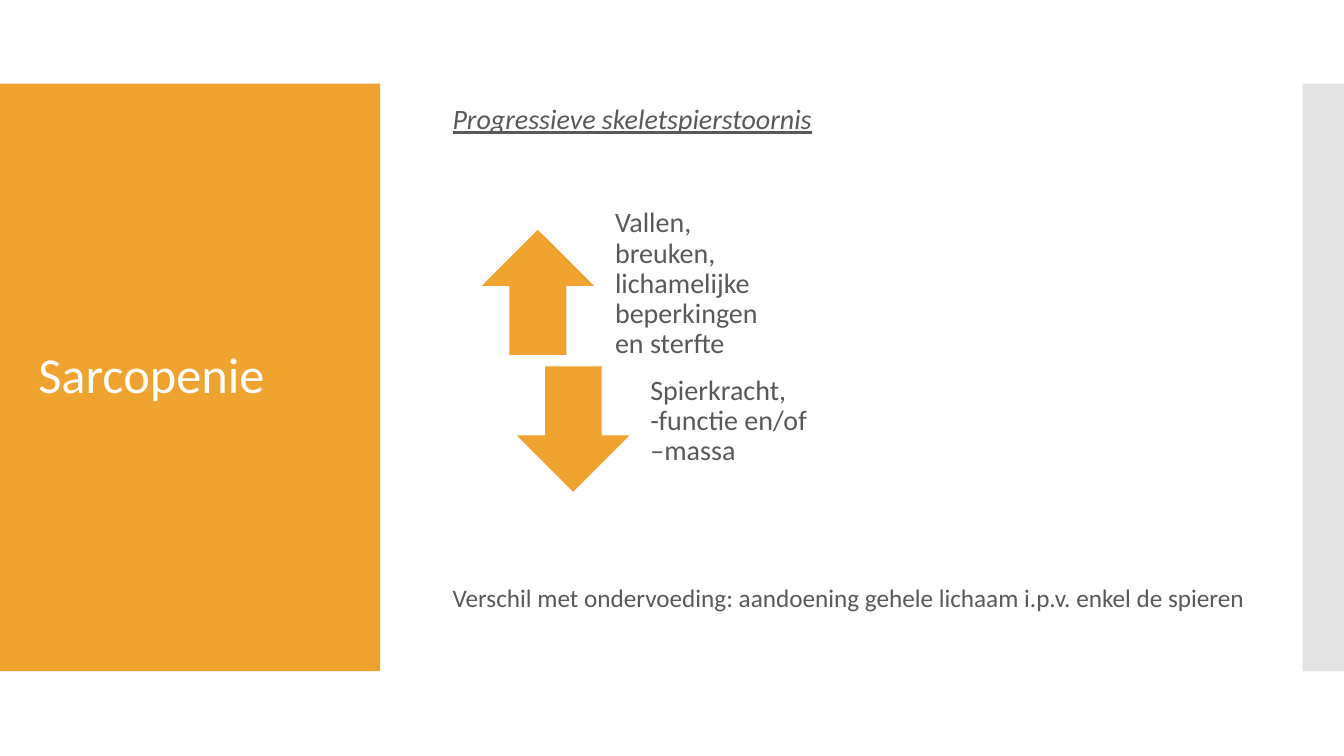
from lxml import etree
from pptx import Presentation
from pptx.dml.color import RGBColor
from pptx.enum.shapes import MSO_SHAPE
from pptx.enum.text import MSO_ANCHOR, PP_ALIGN
from pptx.oxml.ns import qn
from pptx.util import Inches, Pt

RECTANGLE = MSO_SHAPE.RECTANGLE
UP_ARROW, DOWN_ARROW = MSO_SHAPE.UP_ARROW, MSO_SHAPE.DOWN_ARROW
TOP, MIDDLE = MSO_ANCHOR.TOP, MSO_ANCHOR.MIDDLE
LEFT = PP_ALIGN.LEFT

FONT = "Calibri"
COLORS = {
    "panel": "F0A22E",
    "arrow": "EFA22D",
    "strip": "C8C8C8",
    "text": "595959",
    "white": "FFFFFF",
}
TITLE_ONLY = 5
BODY_INSETS = (0.1, 0.05, 0.1, 0.05)
LABEL_INSETS = (0.16, 0, 0.16, 0.16)
EFFECTS = (
    (UP_ARROW, "Vallen, breuken, lichamelijke beperkingen en sterfte"),
    (DOWN_ARROW, "Spierkracht, -functie en/of –massa"),
)


def color(name):
    return RGBColor.from_string(COLORS[name])


def add_filled_shape(slide, kind, box, fill):
    shape = slide.shapes.add_shape(kind, *map(Inches, box))
    shape.shadow.inherit = False
    shape.fill.solid()
    shape.fill.fore_color.rgb = color(fill)
    shape.line.fill.background()
    return shape


def write_text(shape, text, size, text_color="text", anchor=TOP,
               insets=BODY_INSETS, line_spacing=None):
    """Format the shape's text frame, write one paragraph and return its run."""
    frame = shape.text_frame
    frame.word_wrap = True
    frame.vertical_anchor = anchor
    (frame.margin_left, frame.margin_top,
     frame.margin_right, frame.margin_bottom) = map(Inches, insets)
    paragraph = frame.paragraphs[0]
    paragraph.alignment = LEFT
    paragraph.line_spacing = line_spacing
    run = paragraph.add_run()
    run.text = text
    run.font.name = FONT
    run.font.size = Pt(size)
    run.font.color.rgb = color(text_color)
    return run


def add_text(slide, box, text, size, **text_format):
    text_box = slide.shapes.add_textbox(*map(Inches, box))
    return write_text(text_box, text, size, **text_format)


def add_title_panel(slide, box, text):
    left, top, width, height = box
    add_filled_shape(slide, RECTANGLE, box, "panel")
    title = slide.shapes.title
    title.left, title.top = Inches(left + 0.28), Inches(top + 0.4)
    title.width, title.height = Inches(width - 0.55), Inches(height - 0.8)
    write_text(title, text, 36, text_color="white", anchor=MIDDLE, line_spacing=0.9)
    # The title has to lie in front of the panel
    title.element.getparent().append(title.element)


def add_side_strip(slide, box):
    strip = add_filled_shape(slide, RECTANGLE, box, "strip")
    fill_color = next(strip.element.iter(qn("a:srgbClr")))
    etree.SubElement(fill_color, qn("a:alpha"), val="50000")


def add_effects(slide, box):
    """Place the arrows in equal rows, each row a step further to the right."""
    left, top, width, height = box
    indent, gap, arrow_width, label_offset = 0.35, 0.1, 1.15, 1.18
    row_height = (height - gap) / len(EFFECTS)
    label_width = width - label_offset - indent * (len(EFFECTS) - 1)
    for index, (kind, text) in enumerate(EFFECTS):
        row_left = left + index * indent
        row_top = top + index * (row_height + gap)
        arrow = add_filled_shape(
            slide, kind, (row_left, row_top, arrow_width, row_height), "arrow")
        arrow.line.color.rgb = color("white")
        arrow.line.width = Pt(0.85)
        add_text(slide, (row_left + label_offset, row_top, label_width, row_height),
                 text, 20, anchor=MIDDLE, insets=LABEL_INSETS, line_spacing=0.9)


def add_content(slide, box):
    left, top, width, height = box
    heading = add_text(slide, (left, top, 3.86, 0.5),
                       "Progressieve skeletspierstoornis", 20)
    heading.font.italic = True
    heading.font.underline = True
    add_effects(slide, (left + 0.37, top + 1.31, 3.48, 2.62))
    add_text(slide, (left, top + height - 0.4, width, 0.4),
             "Verschil met ondervoeding: aandoening gehele lichaam i.p.v. "
             "enkel de spieren", 18)


def main():
    presentation = Presentation()
    presentation.slide_width = Inches(13.33)
    presentation.slide_height = Inches(7.5)
    slide = presentation.slides.add_slide(presentation.slide_layouts[TITLE_ONLY])
    add_title_panel(slide, (0, 0.83, 3.77, 5.83), "Sarcopenie")
    add_side_strip(slide, (12.92, 0.83, 0.41, 5.83))
    add_content(slide, (4.39, 0.96, 8.16, 5.17))
    presentation.save("out.pptx")


if __name__ == "__main__":
    main()
